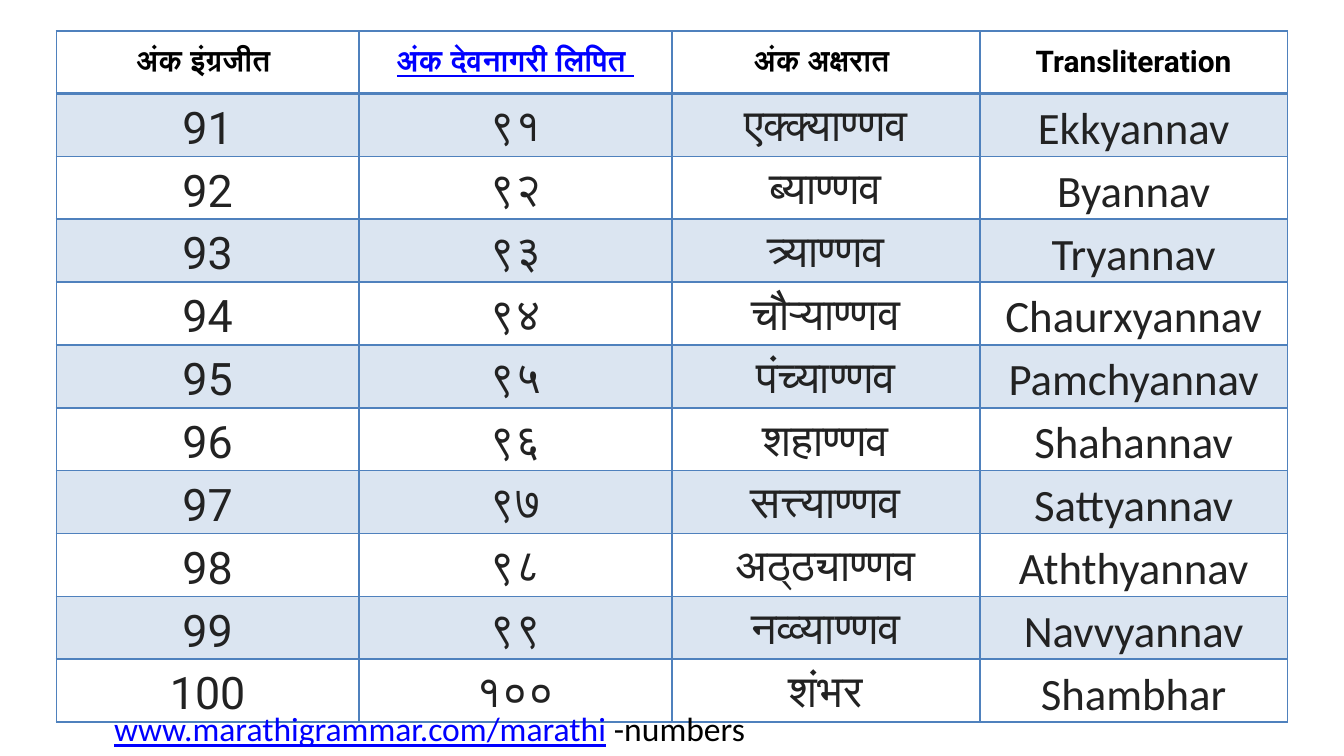
from lxml import etree
from pptx import Presentation
from pptx.dml.color import RGBColor
from pptx.enum.text import MSO_ANCHOR, PP_ALIGN
from pptx.oxml.ns import qn
from pptx.util import Inches, Pt

CENTER = PP_ALIGN.CENTER
MIDDLE = MSO_ANCHOR.MIDDLE

COLORS = {"header": "000000", "link": "0000FF", "body": "222222", "accent": "4F81BD"}

HEADERS = ["अंक इंग्रजीत ", "अंक देवनागरी लिपित ", "अंक अक्षरात ", "Transliteration"]
NUMBERS = [
    ("91", "९१", "एक्क्याण्णव", "Ekkyannav"),
    ("92", "९२", "ब्याण्णव", "Byannav"),
    ("93", "९३", "त्र्याण्णव", "Tryannav"),
    ("94", "९४", "चौऱ्याण्णव", "Chaurxyannav"),
    ("95", "९५", "पंच्याण्णव", "Pamchyannav"),
    ("96", "९६", "शहाण्णव", "Shahannav"),
    ("97", "९७", "सत्त्याण्णव", "Sattyannav"),
    ("98", "९८", "अठ्ठ्याण्णव", "Aththyannav"),
    ("99", "९९", "नव्व्याण्णव", "Navvyannav"),
    ("100", "१००", "शंभर", "Shambhar"),
]
SOURCE = [("www.marathigrammar.com/marathi", "link", True), (" -numbers", "header", False)]

SLIDE_WIDTH = 10
SLIDE_HEIGHT = SLIDE_WIDTH * 9 / 16
COLUMN_WIDTHS = [2.25, 2.33, 2.29, 2.29]
LEFT, TOP, HEIGHT = 0.42, 0.23, 5.13
LINKED_COLUMN, TRANSLITERATION_COLUMN = 1, 3

HEADER_FONT = {"name": "Roboto", "size": Pt(16), "bold": True}
BODY_FONT = {"name": "Roboto", "size": Pt(24), "bold": False}
SOURCE_FONT = {"name": "Calibri", "size": Pt(18)}
HEADER_MARGINS = {"margin_left": 0.1, "margin_right": 0.1, "margin_top": 0.04, "margin_bottom": 0.04}
BODY_MARGINS = {"margin_left": 0.07, "margin_right": 0.07, "margin_top": 0, "margin_bottom": 0}


def add_run(paragraph, text, color, **font_values):
    run = paragraph.add_run()
    run.text = text
    for key, value in font_values.items():
        setattr(run.font, key, value)
    run.font.color.rgb = RGBColor.from_string(COLORS[color])


def draw_borders(cell, row):
    widths = {"lnL": 1, "lnR": 1, "lnT": 2 if row == 1 else 1, "lnB": 2 if row == 0 else 1}
    properties = cell._tc.get_or_add_tcPr()
    for side, width in widths.items():
        line = etree.SubElement(properties, qn(f"a:{side}"), w=str(Pt(width)))
        fill = etree.SubElement(line, qn("a:solidFill"))
        etree.SubElement(fill, qn("a:srgbClr"), val=COLORS["accent"])


def fill_band(cell, row):
    if row % 2 == 0:
        cell.fill.background()
        return
    cell.fill.solid()
    cell.fill.fore_color.rgb = RGBColor.from_string(COLORS["accent"])
    tint = cell._tc.tcPr.find(f"{qn('a:solidFill')}/{qn('a:srgbClr')}")
    etree.SubElement(tint, qn("a:alpha"), val="20000")


def fill_cell(cell, row, column, text):
    is_header = row == 0
    for key, value in (HEADER_MARGINS if is_header else BODY_MARGINS).items():
        setattr(cell, key, Inches(value))
    cell.vertical_anchor = MIDDLE
    draw_borders(cell, row)
    fill_band(cell, row)
    paragraph = cell.text_frame.paragraphs[0]
    paragraph.alignment = CENTER
    if is_header:
        linked = column == LINKED_COLUMN
        add_run(paragraph, text, "link" if linked else "header", underline=linked, **HEADER_FONT)
    else:
        paragraph.line_spacing = 1.15
        font = dict(BODY_FONT)
        if column == TRANSLITERATION_COLUMN:
            font["name"] = "Calibri"
        add_run(paragraph, text, "body", **font)


def add_number_table(slide):
    rows = [HEADERS, *NUMBERS]
    table = slide.shapes.add_table(
        len(rows), len(HEADERS), Inches(LEFT), Inches(TOP),
        Inches(sum(COLUMN_WIDTHS)), Inches(HEIGHT),
    ).table
    table.first_row = table.horz_banding = False
    for column, width in zip(table.columns, COLUMN_WIDTHS):
        column.width = Inches(width)
    for row, texts in enumerate(rows):
        table.rows[row].height = Inches(HEIGHT / len(rows))
        for column, text in enumerate(texts):
            fill_cell(table.cell(row, column), row, column, text)


def add_source(slide):
    frame = slide.shapes.add_textbox(Inches(0.75), Inches(5.22), Inches(4.92), Inches(0.4)).text_frame
    frame.word_wrap = True
    for text, color, underline in SOURCE:
        add_run(frame.paragraphs[0], text, color, underline=underline, **SOURCE_FONT)


def main():
    deck = Presentation()
    deck.slide_width, deck.slide_height = Inches(SLIDE_WIDTH), Inches(SLIDE_HEIGHT)
    slide = deck.slides.add_slide(deck.slide_layouts[6])
    add_number_table(slide)
    add_source(slide)
    deck.save("out.pptx")


if __name__ == "__main__":
    main()
